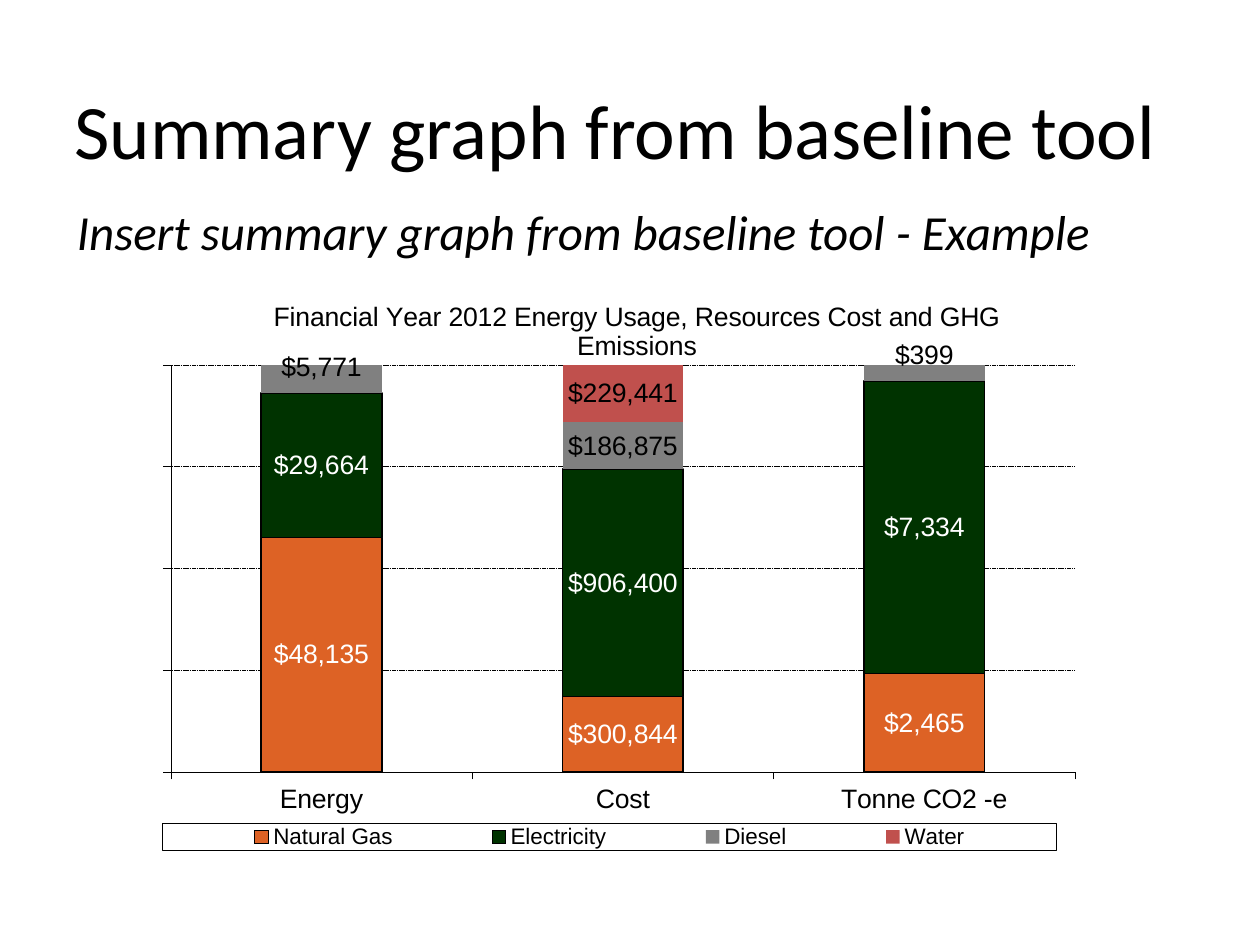
from lxml.etree import SubElement
from pptx import Presentation
from pptx.chart.data import CategoryChartData
from pptx.dml.color import RGBColor
from pptx.enum.chart import XL_CHART_TYPE, XL_LEGEND_POSITION, XL_TICK_LABEL_POSITION, XL_TICK_MARK
from pptx.enum.dml import MSO_LINE
from pptx.enum.text import MSO_ANCHOR
from pptx.oxml import parse_xml
from pptx.oxml.ns import nsdecls, qn
from pptx.util import Cm, Pt

BLACK = RGBColor(0, 0, 0)
WHITE = RGBColor(255, 255, 255)
ORANGE = RGBColor(0xDD, 0x62, 0x25)
GREEN = RGBColor(0, 0x33, 0)
GREY = RGBColor(0x80, 0x80, 0x80)
RED = RGBColor(0xC0, 0x50, 0x4D)

MONEY = '"$"#,##0'
HEAD = "Financial Year 2012 Energy Usage, Resources Cost and GHG Emissions"
CATS = ["Energy", "Cost", "Tonne CO2 -e"]
# name, values, fill, label colour, outlined, label shifts by point
SERIES = [
    ("Natural Gas", (48135, 300844, 2465), ORANGE, WHITE, True, {}),
    ("Electricity", (29664, 906400, 7334), GREEN, WHITE, True, {}),
    ("Diesel", (5771, 186875, 399), GREY, BLACK, False, {0: -0.02, 2: -0.03}),
    ("Water", (None, 229441, None), RED, BLACK, False, {}),
]


def assign(item, values):
    for name, value in values.items():
        setattr(item, name, value)


def place(parent, index, inner=False, **spots):
    """Give a chart part a manual layout, in fractions of the chart."""
    for old in parent.findall(qn("c:layout")):
        parent.remove(old)
    layout = parse_xml(f"<c:layout {nsdecls('c')}><c:manualLayout/></c:layout>")
    modes = {"layoutTarget": "inner"} if inner else {}
    if "w" in spots:
        modes.update(xMode="edge", yMode="edge")
    elif not parent.tag.endswith("dLbl"):
        modes.update(xMode="edge", yMode="edge")
    for name, value in {**modes, **spots}.items():
        SubElement(layout[0], qn(f"c:{name}")).set("val", str(value))
    parent.insert(index, layout)


class Deck:
    """Holds the chart and text style and the current slide."""

    def __init__(self, show):
        self.slide = show.slides.add_slide(show.slide_layouts[6])
        self.small = {"name": "Arial", "size": Pt(15.2), "bold": False}
        self.large = {"name": "Calibri"}

    def font(self, font, base, color=BLACK, **more):
        assign(font, {**base, **more})
        font.color.rgb = color

    def line(self, line, width=0.25, dash=None):
        line.color.rgb = BLACK
        assign(line, {"width": Pt(width), "dash_style": dash})

    def text(self, words, box, size, frame, italic=False):
        body = self.slide.shapes.add_textbox(*map(Cm, box)).text_frame
        assign(body, {"word_wrap": True, **frame})
        para = body.paragraphs[0]
        run = para.add_run()
        run.text = words
        self.font(run.font, self.large, size=Pt(size), italic=italic)
        return para

    def chart(self, box):
        data = CategoryChartData(number_format=MONEY)
        data.categories = CATS
        for name, values, *_ in SERIES:
            data.add_series(name, values)
        kind = XL_CHART_TYPE.COLUMN_STACKED_100
        chart = self.slide.shapes.add_chart(kind, *map(Cm, box), data).chart
        self.font(chart.font, self.small)
        plot = chart.plots[0]
        assign(plot, {"gap_width": 150, "overlap": 100, "vary_by_categories": False})
        for series, row in zip(plot.series, SERIES):
            self.column(series, *row[2:])
        area = chart._chartSpace.chart.plotArea
        place(area, 0, True, x=0.104, y=0.141, w=0.885, h=0.707)
        self.axes(chart)
        self.title(chart)
        self.legend(chart)

    def column(self, series, fill, color, lined, shifts):
        series.format.fill.solid()
        series.format.fill.fore_color.rgb = fill
        if lined:
            self.line(series.format.line, 1)
        else:
            series.format.line.fill.background()
        labels = series.data_labels
        assign(labels, {"show_value": True, "number_format": MONEY,
                        "number_format_is_linked": False})
        self.font(labels.font, self.small, color)
        for index, shift in shifts.items():
            self.font(series.points[index].data_label.font, self.small, color)
        for label in labels._element.findall(qn("c:dLbl")):
            index = int(label.find(qn("c:idx")).get("val"))
            place(label, 1, x=0, y=shifts[index])
            form = parse_xml(f"<c:numFmt {nsdecls('c')} sourceLinked='0'/>")
            form.set("formatCode", MONEY)
            label.insert(2, form)

    def axes(self, chart):
        for axis in (chart.category_axis, chart.value_axis):
            assign(axis, {"major_tick_mark": XL_TICK_MARK.OUTSIDE,
                          "minor_tick_mark": XL_TICK_MARK.NONE})
            self.line(axis.format.line)
            self.font(axis.tick_labels.font, self.small)
        assign(axis, {"minimum_scale": 0, "maximum_scale": 1, "major_unit": 0.25,
                      "has_major_gridlines": True,
                      "tick_label_position": XL_TICK_LABEL_POSITION.NONE})
        self.line(axis.major_gridlines.format.line, dash=MSO_LINE.SQUARE_DOT)

    def title(self, chart):
        title = chart.chart_title
        title.text_frame.text = HEAD
        run = title.text_frame.paragraphs[0].runs[0]
        self.font(run.font, self.small)
        place(title._element, 1, x=0.2, y=0.02)

    def legend(self, chart):
        chart.has_legend = True
        legend = chart.legend
        assign(legend, {"position": XL_LEGEND_POSITION.BOTTOM,
                        "include_in_layout": False})
        self.font(legend.font, self.small, size=Pt(12.8))
        root = legend._element
        place(root, 1, x=0.096, y=0.937, w=0.875, h=0.047)
        frame = parse_xml(
            f'<c:spPr {nsdecls("c", "a")}><a:ln w="3175"><a:solidFill>'
            f'<a:srgbClr val="{BLACK}"/></a:solidFill></a:ln></c:spPr>')
        root.find(qn("c:txPr")).addprevious(frame)


def main():
    show = Presentation()
    assign(show, {"slide_width": Cm(25.4), "slide_height": Cm(19.05)})
    deck = Deck(show)
    deck.text("Summary graph from baseline tool", (1.5, 0.76, 23.22, 2.77), 44,
              {"vertical_anchor": MSO_ANCHOR.BOTTOM, "margin_left": 0,
               "margin_right": Cm(0.36), "margin_bottom": 0})
    para = deck.text("Insert summary graph from baseline tool - Example",
                     (1.3, 3.94, 22.86, 12.57), 28, {}, italic=True)
    para.space_before = Pt(5.6)
    props = para._p.get_or_add_pPr()
    for name, value in {"marL": Cm(0.97), "indent": -Cm(0.97)}.items():
        props.set(name, str(value))
    deck.chart((1.3, 5.72, 20.6, 11.61))
    show.save("out.pptx")


if __name__ == "__main__":
    main()
